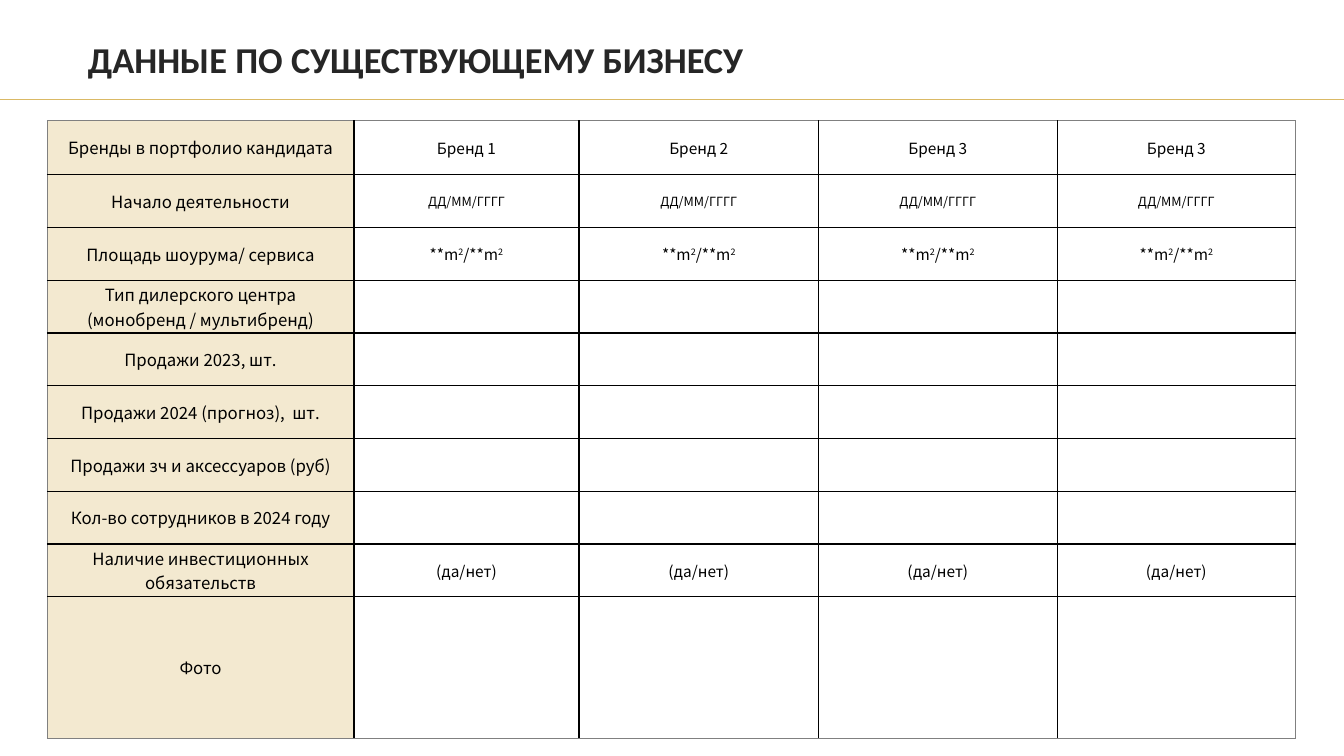
from dataclasses import dataclass

from lxml.etree import SubElement
from pptx import Presentation
from pptx.dml.color import RGBColor as RGB
from pptx.enum.shapes import MSO_CONNECTOR as Connector
from pptx.enum.text import MSO_ANCHOR as Anchor, PP_ALIGN as Align
from pptx.oxml.ns import qn
from pptx.util import Cm, Pt

# Content: row label, then its entry for each brand
HEADING = "ДАННЫЕ ПО СУЩЕСТВУЮЩЕМУ БИЗНЕСУ"
BRANDS = ["Бренд 1", "Бренд 2", "Бренд 3", "Бренд 3"]
AREA = ["**m", "2", "/**m", "2"]  # every second piece is superscript
BLANK = [""] * len(BRANDS)
ROWS = [
    ("Бренды в портфолио кандидата", BRANDS),
    ("Начало деятельности", ["ДД/ММ/ГГГГ"] * len(BRANDS)),
    ("Площадь шоурума/ сервиса", [AREA] * len(BRANDS)),
    ("Тип дилерского центра\n(монобренд / мультибренд)", BLANK),
    ("Продажи 2023, шт.", BLANK),
    ("Продажи 2024 (прогноз),  шт.", BLANK),
    ("Продажи зч и аксессуаров (руб)", BLANK),
    ("Кол-во сотрудников в 2024 году", BLANK),
    ("Наличие инвестиционных обязательств", ["(да/нет)"] * len(BRANDS)),
    ("Фото", BLANK),
]
DATE_ROW = 1
COLUMN_WIDTHS = [7.73, 5.67, 6.04, 6.01, 6.01]
ROW_HEIGHTS = [1.36] + [1.33] * 8 + [3.56]


@dataclass(frozen=True)
class Theme:
    title_font: str = "Calibri"
    table_font: str = "Noto Sans CJK SC"
    title_color: str = "262626"
    text: str = "000000"
    gold: str = "DAB965"
    label_alpha: int = 30
    white: str = "FFFFFF"
    inner_border: tuple = ("000000", 1)
    outer_border: tuple = ("808080", 0.75)
    title_size: float = 26
    label_size: float = 12
    entry_size: float = 11
    date_size: float = 9


THEME = Theme()


def style_font(font, name, size, color, bold=False):
    font.name, font.size, font.bold = name, Pt(size), bold
    font.color.rgb = RGB.from_string(color)


def write_entry(cell, entry, size):
    """Fill a cell with plain text or with pieces alternating base and superscript."""
    frame = cell.text_frame
    if isinstance(entry, str):
        frame.text = entry
    else:
        for index, piece in enumerate(entry):
            run = frame.paragraphs[0].add_run()
            run.text = piece
            if index % 2:
                run._r.get_or_add_rPr().set("baseline", "30000")
    for paragraph in frame.paragraphs:
        paragraph.alignment = Align.CENTER
        for run in paragraph.runs:
            style_font(run.font, THEME.table_font, size, THEME.text)


def set_borders(cell, outer_sides):
    properties = cell._tc.get_or_add_tcPr()
    for index, side in enumerate("LRTB"):
        color, width = THEME.outer_border if side in outer_sides else THEME.inner_border
        line = SubElement(properties, qn(f"a:ln{side}"), w=str(Pt(width)))
        fill = SubElement(line, qn("a:solidFill"))
        SubElement(fill, qn("a:srgbClr"), val=color)
        properties.insert(index, line)


def set_fill(cell, color, alpha=100):
    cell.fill.solid()
    cell.fill.fore_color.rgb = RGB.from_string(color)
    if alpha < 100:
        swatch = cell._tc.tcPr.find(f"{qn('a:solidFill')}/{qn('a:srgbClr')}")
        SubElement(swatch, qn("a:alpha"), val=str(alpha * 1000))


def add_title(slide):
    title = slide.shapes.title
    title.left, title.top, title.width, title.height = Cm(1.96), Cm(0.76), Cm(30.94), Cm(1.57)
    frame = title.text_frame
    frame.text = HEADING
    frame.vertical_anchor = Anchor.MIDDLE
    paragraph = frame.paragraphs[0]
    paragraph.alignment = Align.LEFT
    paragraph.line_spacing = 0.9
    style_font(paragraph.runs[0].font, THEME.title_font, THEME.title_size,
               THEME.title_color, bold=True)


def add_rule(slide, width):
    rule = slide.shapes.add_connector(Connector.STRAIGHT, 0, Cm(2.51), width, Cm(2.51))
    rule.line.color.rgb = RGB.from_string(THEME.gold)
    rule.line.width = Pt(0.5)
    SubElement(rule._element.spPr, qn("a:effectLst"))


def add_business_table(slide):
    table = slide.shapes.add_table(
        len(ROWS), len(COLUMN_WIDTHS), Cm(1.19), Cm(3.04),
        Cm(sum(COLUMN_WIDTHS)), Cm(sum(ROW_HEIGHTS))).table
    table.first_row = table.horz_banding = False
    for column, width in zip(table.columns, COLUMN_WIDTHS):
        column.width = Cm(width)
    for row, height in zip(table.rows, ROW_HEIGHTS):
        row.height = Cm(height)

    last_row, last_column = len(ROWS) - 1, len(BRANDS)
    for r, (label, entries) in enumerate(ROWS):
        entry_size = THEME.date_size if r == DATE_ROW else THEME.entry_size
        for c, entry in enumerate([label, *entries]):
            cell = table.cell(r, c)
            is_label = c == 0
            cell.vertical_anchor = Anchor.MIDDLE
            cell.margin_left = cell.margin_right = Cm(0 if is_label else 0.25)
            cell.margin_top = cell.margin_bottom = Cm(0.1 if r == 0 else 0)
            write_entry(cell, entry, THEME.label_size if is_label else entry_size)
            if is_label:
                set_fill(cell, THEME.gold, THEME.label_alpha)
            else:
                set_fill(cell, THEME.white)
            edges = {"L": is_label, "R": c == last_column, "T": r == 0, "B": r == last_row}
            set_borders(cell, [side for side, is_outer in edges.items() if is_outer])


def main():
    deck = Presentation()
    deck.slide_width, deck.slide_height = Cm(33.87), Cm(19.05)
    slide = deck.slides.add_slide(deck.slide_layouts[5])
    add_rule(slide, deck.slide_width)
    add_title(slide)
    add_business_table(slide)
    deck.save("out.pptx")


if __name__ == "__main__":
    main()
